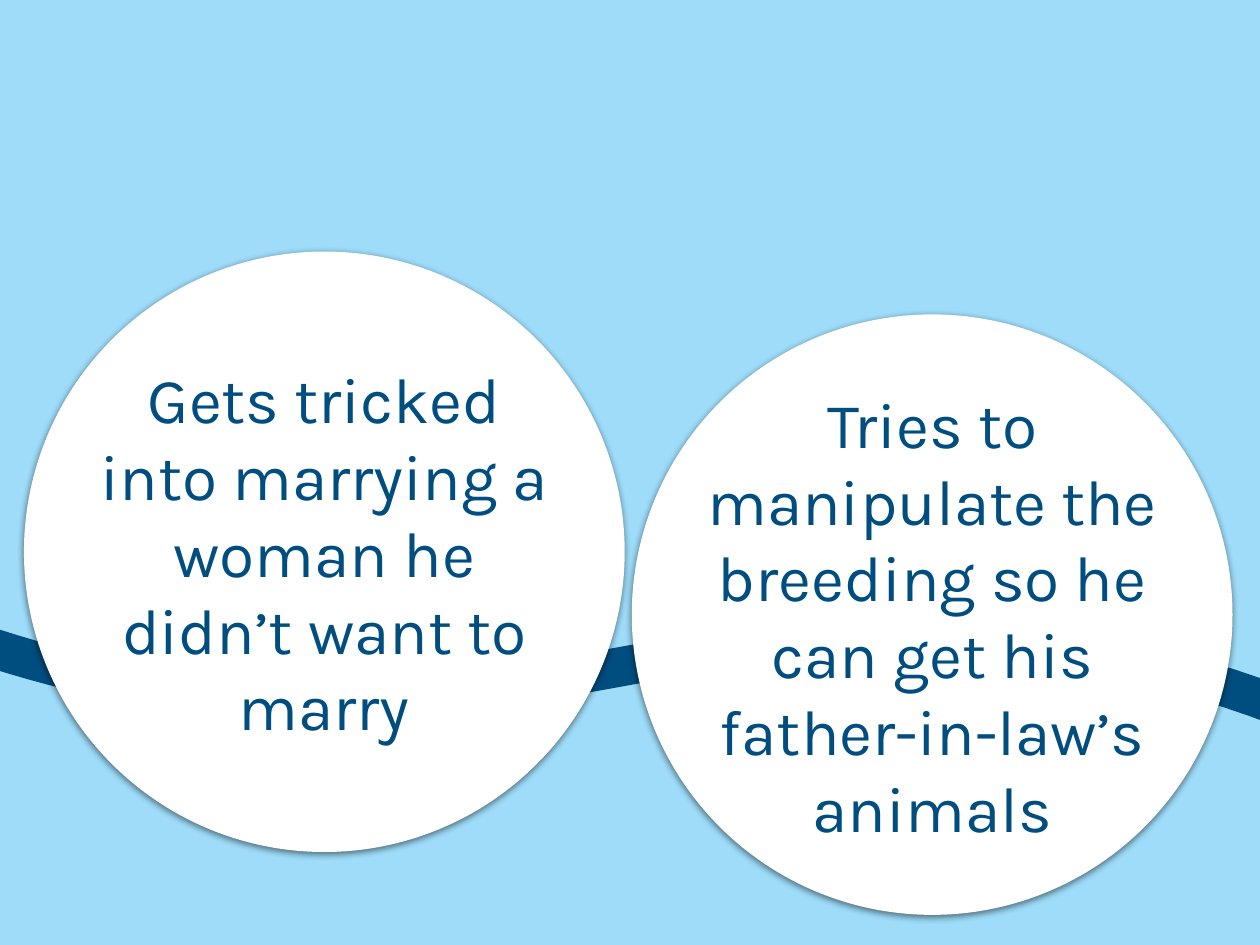
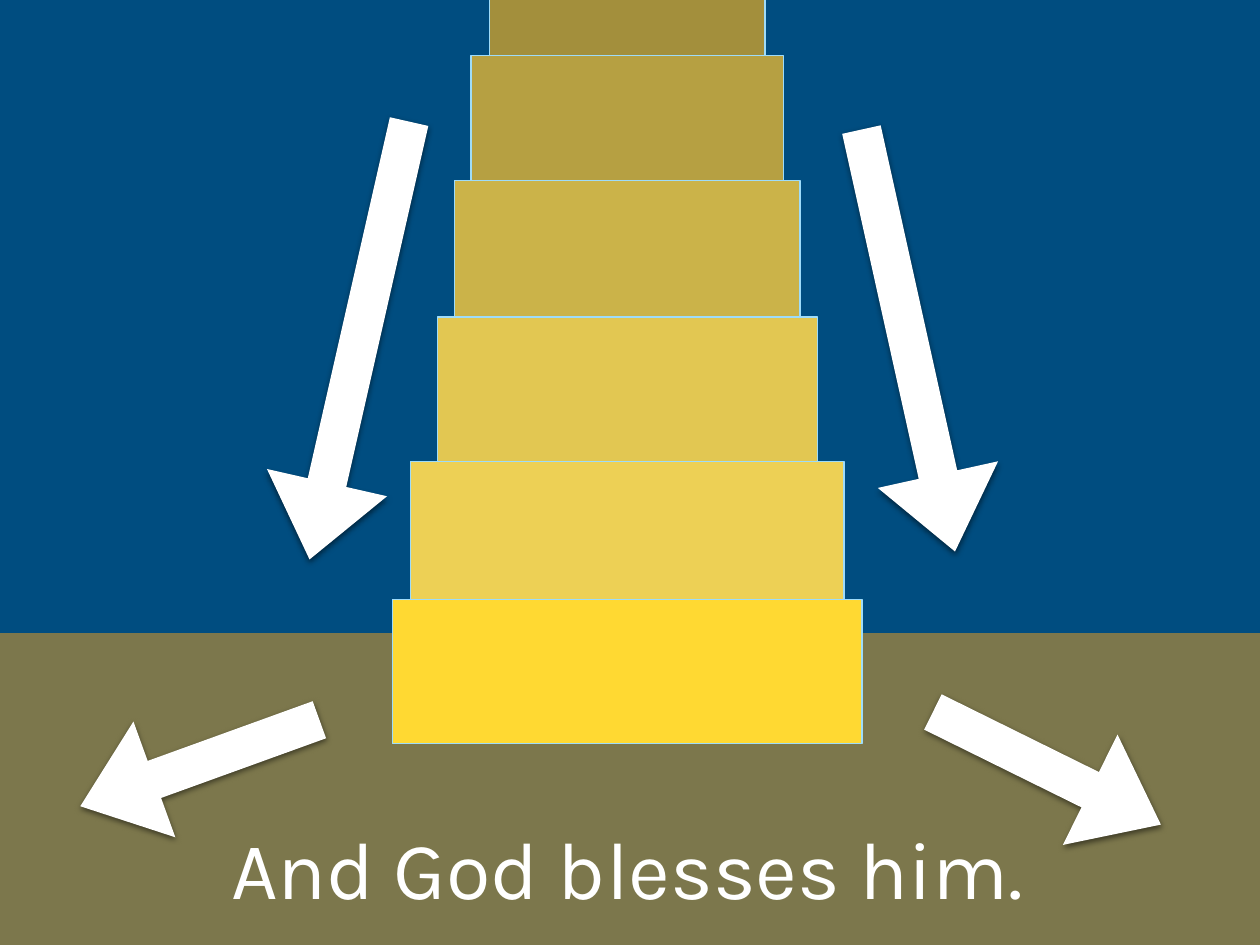
from lxml import etree
from pptx import Presentation
from pptx.dml.color import RGBColor
from pptx.enum.shapes import MSO_SHAPE
from pptx.enum.text import MSO_ANCHOR, PP_ALIGN
from pptx.oxml import parse_xml
from pptx.util import Inches, Pt

RECTANGLE = MSO_SHAPE.RECTANGLE
OVAL = MSO_SHAPE.OVAL
RIGHT_ARROW = MSO_SHAPE.RIGHT_ARROW
MIDDLE = MSO_ANCHOR.MIDDLE
CENTER = PP_ALIGN.CENTER

WIDTH, HEIGHT = 14.22, 10.67
FONT = "Karla"
COLORS = {
    "sky": "9EDCF9",
    "navy": "004D80",
    "white": "FFFFFF",
    "ground": "7C774C",
    "step line": "9EDCFA",
}
SHADOW = etree.tostring(etree.fromstring(
    '<a:effectLst xmlns:a="http://schemas.openxmlformats.org/drawingml/2006/main">'
    '<a:outerShdw blurRad="63500" dist="25400" dir="5400000" rotWithShape="0">'
    '<a:srgbClr val="000000"><a:alpha val="50000"/></a:srgbClr>'
    '</a:outerShdw></a:effectLst>'))


def add_text(page, text, *, left, top, width, height, size, color):
    box = page.shapes.add_textbox(Inches(left), Inches(top), Inches(width), Inches(height))
    frame = box.text_frame
    frame.word_wrap = True
    frame.vertical_anchor = MIDDLE
    frame.margin_left = frame.margin_right = Inches(0.06)
    frame.margin_top = frame.margin_bottom = Inches(0.06)
    para = frame.paragraphs[0]
    para.alignment = CENTER
    span = para.add_run()
    span.text = text
    span.font.name = FONT
    span.font.size = Pt(size)
    span.font.color.rgb = RGBColor.from_string(COLORS[color])


def add_block(page, kind, left, top, width, height, fill, line=None, shadow=False):
    shape = page.shapes.add_shape(
        kind, Inches(left), Inches(top), Inches(width), Inches(height))
    shape.fill.solid()
    shape.fill.fore_color.rgb = RGBColor.from_string(fill)
    if line:
        shape.line.color.rgb = RGBColor.from_string(line)
        shape.line.width = Pt(1)
    else:
        shape.line.fill.background()
    shape.shadow.inherit = False
    if shadow:
        properties = shape.element.spPr
        properties.remove(properties[-1])  # the empty effect list
        properties.append(parse_xml(SHADOW))
    return shape


deck = Presentation()
deck.slide_width, deck.slide_height = Inches(WIDTH), Inches(HEIGHT)
pages = []
for background in ("sky", "navy"):
    page = deck.slides.add_slide(deck.slide_layouts[6])
    page.background.fill.solid()
    page.background.fill.fore_color.rgb = RGBColor.from_string(COLORS[background])
    pages.append(page)
circles_page, stairs_page = pages

# Wavy path: three Bezier curves, each sampled in short steps
wave_start = (-1.02, 6.97)
wave_curves = [
    [(0.8, 7.73), (2.78, 8.04), (4.74, 7.87)],
    [(6.21, 7.74), (7.66, 7.34), (9.13, 7.22)],
    [(11.41, 7.03), (13.69, 7.49), (15.72, 8.55)],
]
STEPS = 24
points = []
start = wave_start
for first, second, end in wave_curves:
    for step in range(1, STEPS + 1):
        t = step / STEPS
        weights = ((1 - t) ** 3, 3 * t * (1 - t) ** 2, 3 * t ** 2 * (1 - t), t ** 3)
        corners = (start, first, second, end)
        points.append(tuple(
            Inches(sum(weight * corner[axis] for weight, corner in zip(weights, corners)))
            for axis in (0, 1)))
    start = end
builder = circles_page.shapes.build_freeform(Inches(wave_start[0]), Inches(wave_start[1]))
builder.add_line_segments(points, close=False)
wave = builder.convert_to_shape()
wave.fill.background()
wave.line.color.rgb = RGBColor.from_string(COLORS["navy"])
wave.line.width = Pt(32)
wave.shadow.inherit = False

# Circles with centred text: left, top, text width, text
DIAMETER = 6.78
TEXT_HEIGHT = 5.04
circles = [
    (0.27, 2.84, 5.31, "Gets tricked into marrying a woman he didn’t want to marry"),
    (7.13, 3.55, 6.05,
     "Tries to manipulate the breeding so he can get his father-in-law’s animals"),
]
for left, top, text_width, text in circles:
    add_block(circles_page, OVAL, left, top, DIAMETER, DIAMETER, COLORS["white"], shadow=True)
    add_text(circles_page, text,
             left=left + (DIAMETER - text_width) / 2, top=top + (DIAMETER - TEXT_HEIGHT) / 2,
             width=text_width, height=TEXT_HEIGHT, size=52, color="navy")

# Ground
GROUND_TOP = 7.15
add_block(stairs_page, RECTANGLE, 0, GROUND_TOP, WIDTH, HEIGHT - GROUND_TOP, COLORS["ground"])

# Stairs, farthest first, on one centre line: top, width, fill
STAIR_CENTER, STAIR_HEIGHT = 7.08, 1.63
stairs = [
    (-0.9, 3.11, "A38F3C"),
    (0.63, 3.53, "B6A042"),
    (2.04, 3.9, "CBB349"),
    (3.58, 4.29, "E2C752"),
    (5.21, 4.89, "EDD055"),
    (6.77, 5.3, "FFD932"),
]
for top, width, fill in stairs:
    add_block(stairs_page, RECTANGLE, STAIR_CENTER - width / 2, top, width, STAIR_HEIGHT,
              fill, line=COLORS["step line"])

# Arrows: left, top, length, rotation
ARROW_HEIGHT = 1.39
arrows = [
    (0.82, 7.92, 2.87, 160.1),
    (10.38, 7.98, 2.87, 26.3),
    (1.52, 3.15, 5.07, 102.8),
    (7.81, 3.15, 4.88, 77.5),
]
for left, top, length, rotation in arrows:
    arrow = add_block(stairs_page, RIGHT_ARROW, left, top, length, ARROW_HEIGHT,
                      COLORS["white"], shadow=True)
    arrow.adjustments[0], arrow.adjustments[1] = 0.32, 0.64
    arrow.rotation = rotation

# Caption
add_text(stairs_page, "And God blesses him.", left=-0.03, top=8.87, width=WIDTH, height=1.83,
         size=66, color="white")

deck.save("out.pptx")
